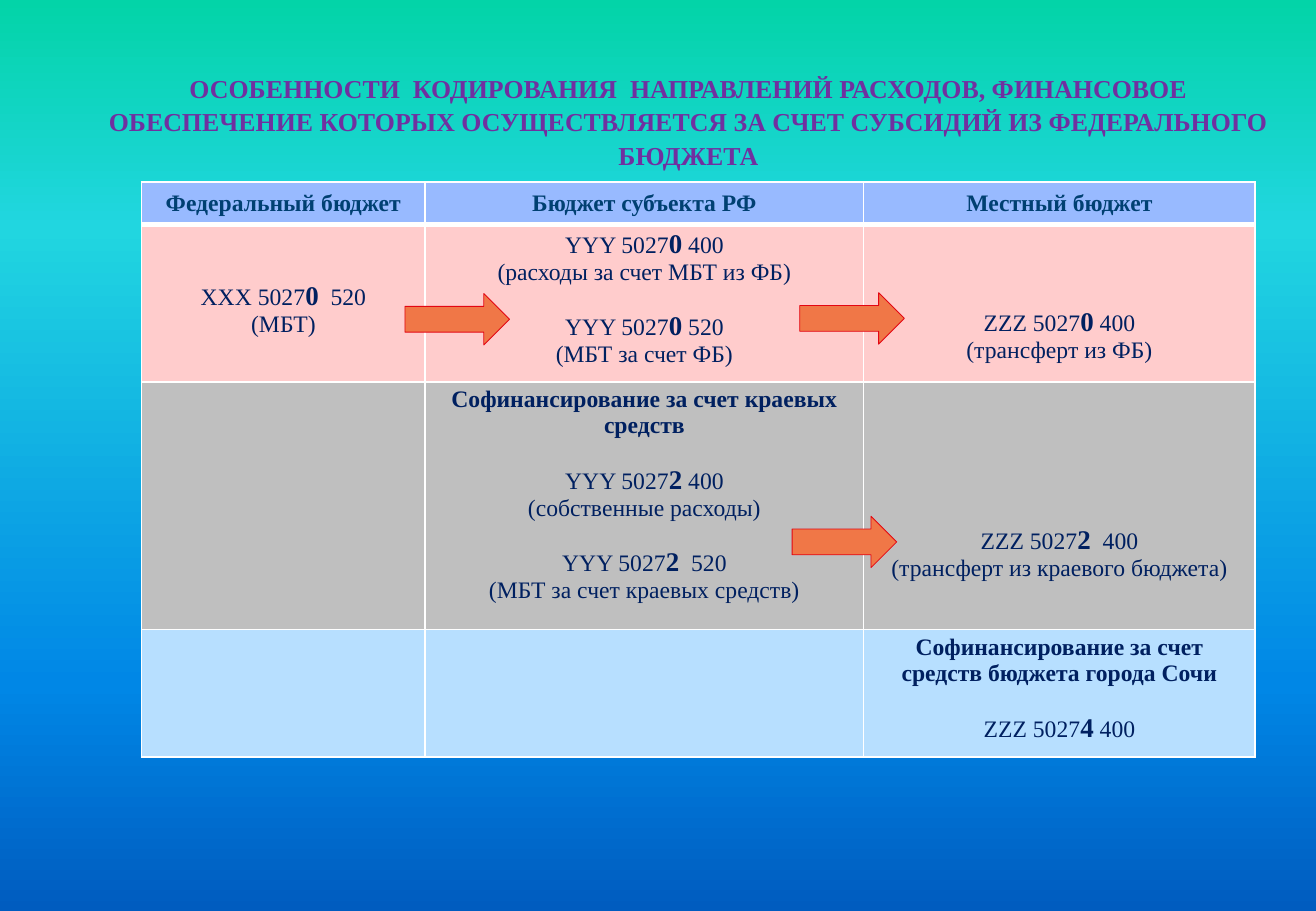
from lxml import etree
from pptx import Presentation
from pptx.dml.color import RGBColor
from pptx.enum.shapes import MSO_SHAPE
from pptx.enum.text import MSO_ANCHOR, PP_ALIGN
from pptx.oxml.ns import qn
from pptx.util import Pt

RIGHT_ARROW = MSO_SHAPE.RIGHT_ARROW
CENTER = PP_ALIGN.CENTER
TOP = MSO_ANCHOR.TOP
FONT = "Times New Roman"
NAVY = "002060"
BLANK_LINE = 15.5
MARGIN = 2.88

TITLE = (
    "ОСОБЕННОСТИ  КОДИРОВАНИЯ  НАПРАВЛЕНИЙ РАСХОДОВ, ФИНАНСОВОЕ "
    "ОБЕСПЕЧЕНИЕ КОТОРЫХ ОСУЩЕСТВЛЯЕТСЯ ЗА СЧЕТ СУБСИДИЙ ИЗ ФЕДЕРАЛЬНОГО БЮДЖЕТА"
)
BACKGROUND = [(0, "03D4A8"), (25, "21D6E0"), (75, "0087E6"), (100, "005CBF")]
COLUMN_WIDTHS = [168, 260, 232]
ROW_HEIGHTS = [23, 92, 147, 75.5]
ROW_FILLS = ["98BAFF", "FFCCCC", "BFBFBF", "B7DFFF"]
HEADINGS = ["Федеральный бюджет", "Бюджет субъекта РФ", "Местный бюджет"]
HEADING_STYLE = {"bold": True, "color": "004072", "line_spacing": 1.15}
BOLD = {"bold": True}
GAP = {"before": BLANK_LINE}

# fmt: off
BODY = {
    (1, 0): (31, [("ХХХ 5027|0|  520", {}), ("(МБТ)", {})]),
    (1, 1): (0, [("YYY 5027|0| 400", {}), ("(расходы за счет МБТ из ФБ)", {}),
                 ("YYY 5027|0| 520", GAP), ("(МБТ за счет ФБ)", {})]),
    (1, 2): (46.5, [("ZZZ 5027|0| 400", {}), ("(трансферт из ФБ)", {})]),
    (2, 1): (0, [("Софинансирование за счет краевых средств", BOLD),
                 ("YYY 5027|2| 400", GAP), ("(собственные расходы)", {}),
                 ("YYY 5027|2|  520", GAP), ("(МБТ за счет краевых средств)", {})]),
    (2, 2): (82, [("ZZZ 5027|2|  400", {}), ("(трансферт из краевого бюджета)", {})]),
    (3, 2): (0, [("Софинансирование за счет средств бюджета города Сочи", BOLD),
                 ("ZZZ 5027|4| 400", GAP)]),
}
# fmt: on
ARROWS = [(240, 174), (474, 173.5), (469.5, 306)]


def color_of(value):
    """Turn a hex string into a colour."""
    return RGBColor.from_string(value)


def write_text(paragraph, text, size=14, color=NAVY, bold=False, before=0, line_spacing=1.0):
    """Write centred text in which the part between bars is bold and larger."""
    paragraph.alignment = CENTER
    paragraph.space_before = Pt(before)
    paragraph.line_spacing = line_spacing
    for index, part in enumerate(text.split("|")):
        emphasized = index % 2 == 1
        run = paragraph.add_run()
        run.text = part
        run.font.name = FONT
        run.font.size = Pt(size + 2 if emphasized else size)
        run.font.bold = bold or emphasized
        run.font.color.rgb = color_of(color)


def paint_background(slide):
    """Fill the slide with the vertical four-colour gradient."""
    fill = slide.background.fill
    fill.gradient()
    fill.gradient_angle = 270
    stops = next(slide.element.iter(qn("a:gsLst")))
    for stop in list(stops):
        stops.remove(stop)
    for position, color in BACKGROUND:
        stop = etree.SubElement(stops, qn("a:gs"), pos=str(position * 1000))
        etree.SubElement(stop, qn("a:srgbClr"), val=color)


def add_title(slide, left, top, width, height):
    """Place the slide heading in the given box."""
    frame = slide.shapes.add_textbox(Pt(left), Pt(top), Pt(width), Pt(height)).text_frame
    frame.word_wrap = True
    frame.vertical_anchor = TOP
    frame.margin_left = frame.margin_right = frame.margin_top = frame.margin_bottom = 0
    write_text(
        frame.paragraphs[0], TITLE, size=15.3, color="7030A0", bold=True, line_spacing=1.07
    )


def set_borders(cell, widths):
    """Draw white borders of the given widths around a cell."""
    properties = cell._tc.get_or_add_tcPr()
    for index, (side, width) in enumerate(widths.items()):
        line = etree.Element(qn(f"a:ln{side}"), w=str(Pt(width)))
        fill = etree.SubElement(line, qn("a:solidFill"))
        etree.SubElement(fill, qn("a:srgbClr"), val="FFFFFF")
        properties.insert(index, line)


def fill_cell(cell, row, offset, lines):
    """Format one cell and write its lines below the given offset."""
    cell.fill.solid()
    cell.fill.fore_color.rgb = color_of(ROW_FILLS[row])
    cell.vertical_anchor = TOP
    cell.margin_left = cell.margin_right = Pt(5)
    cell.margin_top, cell.margin_bottom = Pt(MARGIN + offset), Pt(MARGIN)
    set_borders(
        cell, {"L": 1, "R": 1, "T": 3 if row == 1 else 1, "B": 3 if row == 0 else 1}
    )
    frame = cell.text_frame
    for index, (text, style) in enumerate(lines):
        paragraph = frame.add_paragraph() if index else frame.paragraphs[0]
        write_text(paragraph, text, **style)


def add_budget_table(slide, left, top):
    """Place the table of budget levels at the given corner."""
    table = slide.shapes.add_table(
        len(ROW_HEIGHTS), len(COLUMN_WIDTHS), Pt(left), Pt(top),
        Pt(sum(COLUMN_WIDTHS)), Pt(sum(ROW_HEIGHTS)),
    ).table
    for column, width in zip(table.columns, COLUMN_WIDTHS):
        column.width = Pt(width)
    headings = {(0, i): (0, [(text, HEADING_STYLE)]) for i, text in enumerate(HEADINGS)}
    contents = {**headings, **BODY}
    for row, height in enumerate(ROW_HEIGHTS):
        table.rows[row].height = Pt(height)
        for column in range(len(COLUMN_WIDTHS)):
            offset, lines = contents.get((row, column), (0, []))
            fill_cell(table.cell(row, column), row, offset, lines)


def add_transfer_arrow(slide, left, top, width=62, height=30.5):
    """Place one arrow that shows a transfer between budgets."""
    arrow = slide.shapes.add_shape(RIGHT_ARROW, Pt(left), Pt(top), Pt(width), Pt(height))
    arrow.shadow.inherit = False
    arrow.fill.solid()
    arrow.fill.fore_color.rgb = color_of("F07747")
    arrow.line.color.rgb = color_of("E30613")
    arrow.line.width = Pt(0.5)


def main():
    """Build the slide and save the presentation."""
    presentation = Presentation()
    presentation.slide_width, presentation.slide_height = Pt(780), Pt(540)
    slide = presentation.slides.add_slide(presentation.slide_layouts[6])
    paint_background(slide)
    add_title(slide, 54, 42, 708, 48)
    add_budget_table(slide, 84, 108)
    for left, top in ARROWS:
        add_transfer_arrow(slide, left, top)
    presentation.save("out.pptx")


if __name__ == "__main__":
    main()
